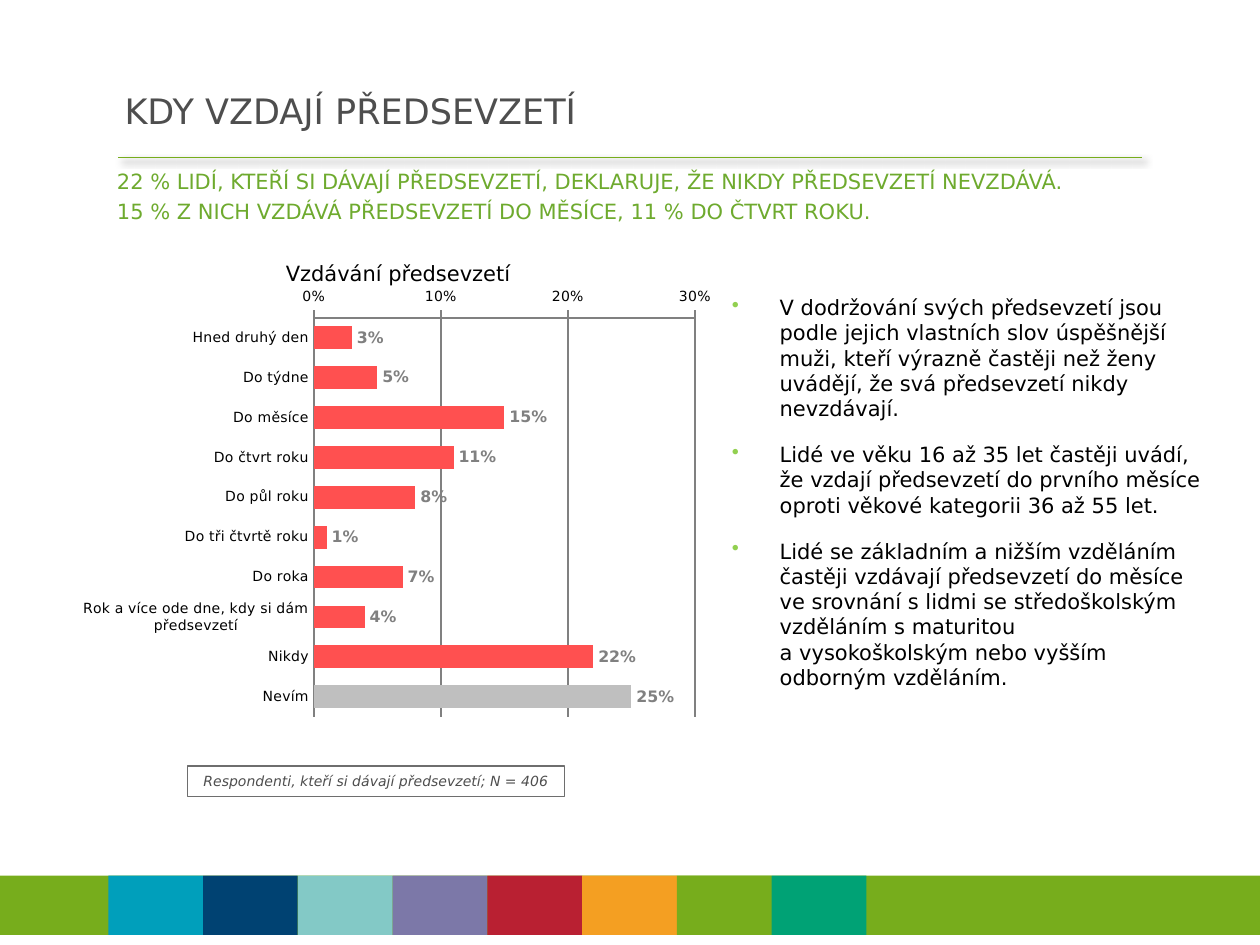
from dataclasses import dataclass

from lxml import etree
from pptx import Presentation
from pptx import util as u
from pptx.chart.data import CategoryChartData
from pptx.dml.color import RGBColor
from pptx.enum import chart as charts, shapes, text
from pptx.oxml import parse_xml
from pptx.oxml.ns import nsdecls, qn


@dataclass(frozen=True)
class Theme:
    """Colours, font and type sizes of the slide."""
    font: str = "DejaVu Sans"
    title_size: int = 20
    body_size: int = 12
    label_size: int = 9
    small_size: int = 8
    black: str = "000000"
    dark: str = "4E4E4E"
    frame: str = "6E6E6E"
    grey: str = "808080"
    pale: str = "BFBFBF"
    red: str = "FF5050"
    lead: str = "6EAA2E"
    green: str = "77AD1C"
    bullet: str = "92D050"
    tiles: tuple = ("009FBB", "004272", "83C9C6", "7C78A8",
                    "B92032", "F49F22", "77AD1C", "00A275")


THEME = Theme()
LEAD = (
    "22 % LIDÍ, KTEŘÍ SI DÁVAJÍ PŘEDSEVZETÍ, DEKLARUJE, ŽE NIKDY PŘEDSEVZETÍ NEVZDÁVÁ.",
    "15 % Z NICH VZDÁVÁ PŘEDSEVZETÍ DO MĚSÍCE, 11 % DO ČTVRT ROKU.",
)
SHARES = {
    "Hned druhý den": 0.03,
    "Do týdne": 0.05,
    "Do měsíce": 0.15,
    "Do čtvrt roku": 0.11,
    "Do půl roku": 0.08,
    "Do tři čtvrtě roku": 0.01,
    "Do roka": 0.07,
    "Rok a více ode dne, kdy si dám předsevzetí": 0.04,
    "Nikdy": 0.22,
    "Nevím": 0.25,
}
FINDINGS = (
    "V dodržování svých předsevzetí jsou podle jejich vlastních slov úspěšnější muži, "
    "kteří výrazně častěji než ženy uvádějí, že svá předsevzetí nikdy nevzdávají.",
    "Lidé ve věku 16 až 35 let častěji uvádí, že vzdají předsevzetí do prvního měsíce "
    "oproti věkové kategorii 36 až 55 let.",
    "Lidé se základním a nižším vzděláním častěji vzdávají předsevzetí do měsíce "
    "ve srovnání s lidmi se středoškolským vzděláním s maturitou\n"
    "a vysokoškolským nebo vyšším odborným vzděláním.",
)


def rgb(color):
    """Turn a hex string into a colour."""
    return RGBColor.from_string(color)


def inches(*lengths):
    """Turn numbers into lengths in inches."""
    return [u.Inches(length) for length in lengths]


def style_font(font, size, color, bold=False, italic=False):
    """Set the face, size and colour of a font."""
    font.name, font.size = THEME.font, u.Pt(size)
    font.color.rgb = rgb(color)
    font.bold, font.italic = bold, italic


def write(para, words, size, color, italic=False):
    """Add the words to a paragraph, one run for each forced line."""
    for index, line in enumerate(words.split("\n")):
        if index:
            para.add_line_break()
        span = para.add_run()
        span.text = line
        style_font(span.font, size, color, italic=italic)


def add_text(page, box, lines, size, color, before=0, after=0, middle=False):
    """Place a text box with one paragraph for each line."""
    frame = page.shapes.add_textbox(*inches(*box)).text_frame
    frame.word_wrap = True
    if middle:
        frame.vertical_anchor = text.MSO_ANCHOR.MIDDLE
    for index, line in enumerate(lines):
        para = frame.add_paragraph() if index else frame.paragraphs[0]
        para.space_before = u.Pt(before if index else 0)
        para.space_after = u.Pt(after)
        write(para, line, size, color)
    return frame


def add_rectangle(page, box, fill=None, outline=None):
    """Place a flat rectangle."""
    shape = page.shapes.add_shape(shapes.MSO_SHAPE.RECTANGLE, *inches(*box))
    shape.shadow.inherit = False
    if fill:
        shape.fill.solid()
        shape.fill.fore_color.rgb = rgb(fill)
    else:
        shape.fill.background()
    if outline:
        shape.line.color.rgb = rgb(outline)
        shape.line.width = u.Pt(0.75)
    else:
        shape.line.fill.background()
    return shape


def add_rule(page, left, top, width):
    """Draw the green rule with its soft shadow."""
    rule = page.shapes.add_connector(
        shapes.MSO_CONNECTOR.STRAIGHT, *inches(left, top, left + width, top))
    rule.line.color.rgb = rgb(THEME.green)
    rule.line.width = u.Pt(0.75)
    rule._element.spPr.append(parse_xml(
        f'<a:effectLst {nsdecls("a")}><a:outerShdw blurRad="{u.Pt(4)}" dist="{u.Pt(3)}" '
        'dir="2700000" rotWithShape="0"><a:srgbClr val="000000"><a:alpha val="40000"/>'
        '</a:srgbClr></a:outerShdw></a:effectLst>'))


def add_band(page, left, top, width, height):
    """Draw the green footer band with its row of coloured tiles."""
    add_rectangle(page, (left, top, width, height), THEME.green)
    for index, color in enumerate(THEME.tiles):
        add_rectangle(page, (left + 0.86 + 0.752 * index, top, 0.752, height), color)


def add_findings(page, box):
    """Place the bulleted findings."""
    frame = add_text(page, box, FINDINGS, THEME.body_size, THEME.black, before=6, after=6)
    for para in frame.paragraphs:
        props = para._p.get_or_add_pPr()
        props.set("marL", str(u.Inches(0.38)))
        props.set("indent", str(u.Inches(-0.38)))
        color = etree.SubElement(props, qn("a:buClr"))
        etree.SubElement(color, qn("a:srgbClr"), val=THEME.bullet)
        etree.SubElement(props, qn("a:buChar"), char="•")


def add_share_chart(page, box):
    """Place the bar chart of when resolutions are given up."""
    data = CategoryChartData(number_format="0%")
    data.categories = list(SHARES)
    data.add_series("Series 1", list(SHARES.values()))
    chart = page.shapes.add_chart(
        charts.XL_CHART_TYPE.BAR_CLUSTERED, *inches(*box), data).chart
    chart.has_legend = chart.has_title = False
    style_font(chart.font, THEME.small_size, THEME.black)

    rows, scale = chart.category_axis, chart.value_axis
    rows.reverse_order = True
    rows.crosses = charts.XL_AXIS_CROSSES.MAXIMUM
    rows.major_tick_mark = charts.XL_TICK_MARK.NONE
    scale.minimum_scale, scale.maximum_scale, scale.major_unit = 0, 0.3, 0.1
    scale.major_tick_mark = charts.XL_TICK_MARK.OUTSIDE
    scale.tick_labels.number_format = "0%"
    scale.tick_labels.number_format_is_linked = False
    for line in (rows.format.line, scale.format.line, scale.major_gridlines.format.line):
        line.color.rgb = rgb(THEME.grey)
        line.width = u.Pt(0.75)

    plot = chart.plots[0]
    plot.gap_width, plot.vary_by_categories = 75, False
    bars = plot.series[0]
    unknown = bars.points[len(SHARES) - 1]
    for part, color in ((bars, THEME.red), (unknown, THEME.pale)):
        part.format.fill.solid()
        part.format.fill.fore_color.rgb = rgb(color)
    labels = bars.data_labels
    labels.show_value = True
    labels.number_format, labels.number_format_is_linked = "0%", False
    labels.position = charts.XL_LABEL_POSITION.OUTSIDE_END
    style_font(labels.font, THEME.label_size, THEME.grey, bold=True)

    area = chart._chartSpace.chart.plotArea
    for old in area.findall(qn("c:layout")):
        area.remove(old)
    layout = etree.Element(qn("c:layout"))
    manual = etree.SubElement(layout, qn("c:manualLayout"))
    for tag, value in (("layoutTarget", "inner"), ("xMode", "edge"), ("yMode", "edge"),
                       ("x", 0.418), ("y", 0.058), ("w", 0.547), ("h", 0.853)):
        etree.SubElement(manual, qn(f"c:{tag}"), val=str(value))
    area.insert(0, layout)


def add_note(page, box):
    """Place the framed note on the respondents."""
    frame = add_rectangle(page, box, outline=THEME.frame).text_frame
    frame.word_wrap = True
    frame.vertical_anchor = text.MSO_ANCHOR.MIDDLE
    para = frame.paragraphs[0]
    para.alignment = text.PP_ALIGN.CENTER
    write(para, "Respondenti, kteří si dávají předsevzetí; N = 406",
          THEME.small_size, THEME.dark, italic=True)


def main():
    """Build the slide and save it."""
    deck = Presentation()
    deck.slide_width, deck.slide_height = inches(10, 7.5)
    page = deck.slides.add_slide(deck.slide_layouts[6])
    add_rule(page, 0.94, 1.25, 8.12)
    add_band(page, 0, 6.95, 10, 0.47)
    add_text(page, (0.89, 0.62, 8.87, 0.51), ["KDY VZDAJÍ PŘEDSEVZETÍ"],
             THEME.title_size, THEME.dark, middle=True)
    add_text(page, (0.83, 1.29, 8.35, 0.55), LEAD, THEME.body_size, THEME.lead, before=2.4)
    add_share_chart(page, (0.18, 2.29, 5.53, 3.73))
    add_text(page, (2.17, 2.02, 4.55, 0.3), ["Vzdávání předsevzetí"],
             THEME.body_size, THEME.black)
    add_note(page, (1.49, 6.08, 2.99, 0.24))
    add_findings(page, (5.71, 2.29, 4.02, 4.1))
    deck.save("out.pptx")


if __name__ == "__main__":
    main()
